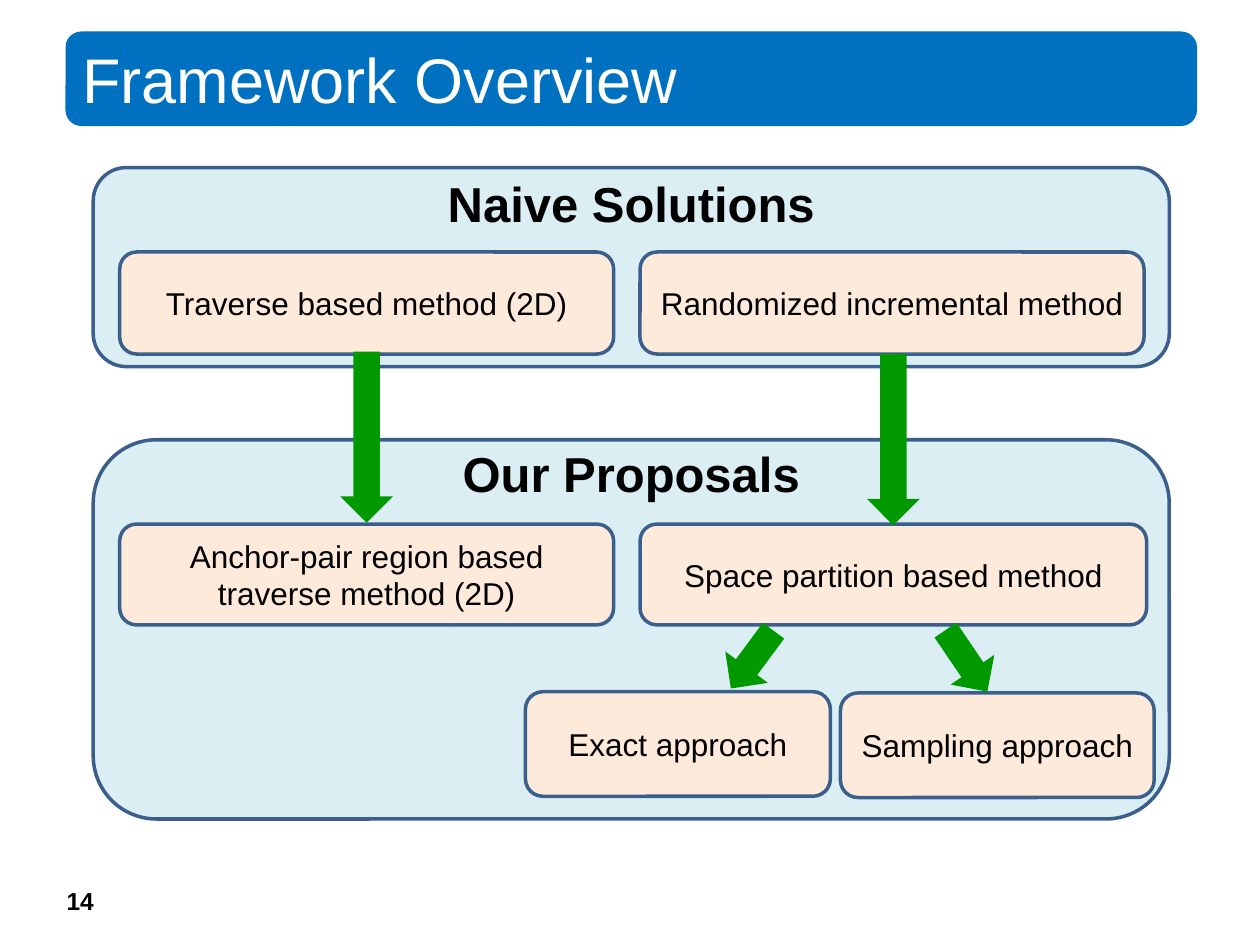
from pptx import Presentation
from pptx.dml.color import RGBColor
from pptx.enum.shapes import MSO_SHAPE
from pptx.enum.text import MSO_ANCHOR, PP_ALIGN
from pptx.util import Inches, Pt

ROUNDED = MSO_SHAPE.ROUNDED_RECTANGLE
DOWN_ARROW = MSO_SHAPE.DOWN_ARROW
TOP, MIDDLE = MSO_ANCHOR.TOP, MSO_ANCHOR.MIDDLE
LEFT, CENTER = PP_ALIGN.LEFT, PP_ALIGN.CENTER

COLORS = {
    "title": "0070C0", "panel": "DBEEF4", "method": "FDEADA",
    "border": "3A5F8C", "arrow": "009900", "dark": "000000", "light": "FFFFFF",
}
FONT = "Arial"

# The slide is a grid of 100 columns by 75 rows; boxes are (left, top, width, height)
COLUMNS, ROWS = 100, 75
SLIDE_WIDTH, SLIDE_HEIGHT = Inches(10), Inches(7.5)
ARROW_WIDTH = 4.2


def to_lengths(box):
    left, top, width, height = box
    column, row = SLIDE_WIDTH / COLUMNS, SLIDE_HEIGHT / ROWS
    return [int(length) for length in
            (left * column, top * row, width * column, height * row)]


def inside(box, offset):
    """Move a box given relative to a region onto the slide."""
    return (box[0] + offset[0], box[1] + offset[1], offset[2], offset[3])


def write_text(shape, text, size=18, color="dark", bold=False,
               align=CENTER, anchor=MIDDLE):
    frame = shape.text_frame
    frame.word_wrap = True
    frame.vertical_anchor = anchor
    paragraph = frame.paragraphs[0]
    paragraph.text = text
    paragraph.alignment = align
    font = paragraph.font
    font.name, font.size, font.bold = FONT, Pt(size), bold
    font.color.rgb = RGBColor.from_string(COLORS[color])


def add_text(slide, box, text, **text_format):
    shape = slide.shapes.add_textbox(*to_lengths(box))
    write_text(shape, text, anchor=TOP, **text_format)


def add_block(slide, box, fill, kind=ROUNDED, border=None):
    shape = slide.shapes.add_shape(kind, *to_lengths(box))
    shape.shadow.inherit = False
    shape.fill.solid()
    shape.fill.fore_color.rgb = RGBColor.from_string(COLORS[fill])
    if border:
        shape.line.color.rgb = RGBColor.from_string(COLORS[border])
        shape.line.width = Pt(2)
    else:
        shape.line.fill.background()
    return shape


def add_title(slide, box, text):
    shape = add_block(slide, box, "title")
    write_text(shape, text, size=36, color="light", align=LEFT)


def add_panel(slide, box, heading, heading_top, methods):
    """Draw a panel with its heading and the methods at offsets within it."""
    add_block(slide, box, "panel", border="border")
    for text, offset in methods:
        shape = add_block(slide, inside(box, offset), "method", border="border")
        write_text(shape, text)
    add_text(slide, inside(box, (0, heading_top, box[2], 5.7)), heading,
             size=28, bold=True)


def add_arrow(slide, left, top, height, rotation=0):
    shape = add_block(slide, (left, top, ARROW_WIDTH, height), "arrow",
                      kind=DOWN_ARROW)
    shape.rotation = rotation


def main():
    presentation = Presentation()
    presentation.slide_width, presentation.slide_height = SLIDE_WIDTH, SLIDE_HEIGHT
    slide = presentation.slides.add_slide(presentation.slide_layouts[6])

    # Page number and title bar
    add_text(slide, (4.3, 69.8, 4.7, 3.4), "14", size=14, bold=True, align=LEFT)
    add_title(slide, (5.2, 2.5, 89.8, 7.5), "Framework Overview")

    # Panels with their methods
    add_panel(slide, (7.4, 13.3, 85.4, 15.8), "Naive Solutions", 0, [
        ("Traverse based method (2D)", (2.1, 6.7, 39.2, 8.1)),
        ("Randomized incremental method", (43.4, 6.7, 40, 8.1)),
    ])
    add_panel(slide, (7.4, 34.9, 85.4, 30.1), "Our Proposals", -0.2, [
        ("Anchor-pair region based traverse method (2D)", (2.1, 6.7, 39.2, 8)),
        ("Space partition based method", (43.4, 6.7, 40.2, 8)),
        ("Exact approach", (34.3, 20, 24.2, 8.3)),
        ("Sampling approach", (59.3, 20.1, 24.9, 8.3)),
    ])

    # Arrows from each method to what it leads to
    add_arrow(slide, 27, 27.9, 13.6)
    add_arrow(slide, 68.8, 28.1, 13.6)
    add_arrow(slide, 57.6, 49.5, 5.7, rotation=36.4)
    add_arrow(slide, 74.6, 49.5, 5.9, rotation=325.8)

    presentation.save("out.pptx")


if __name__ == "__main__":
    main()
